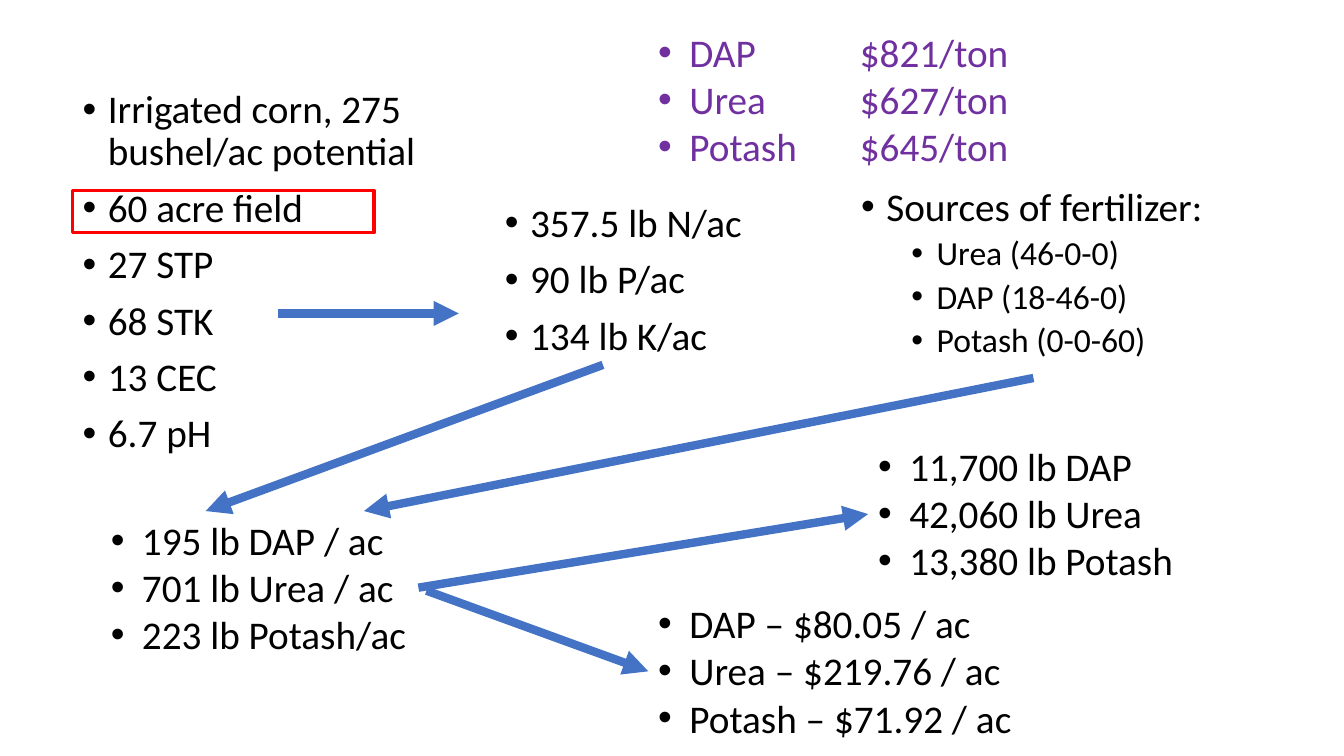
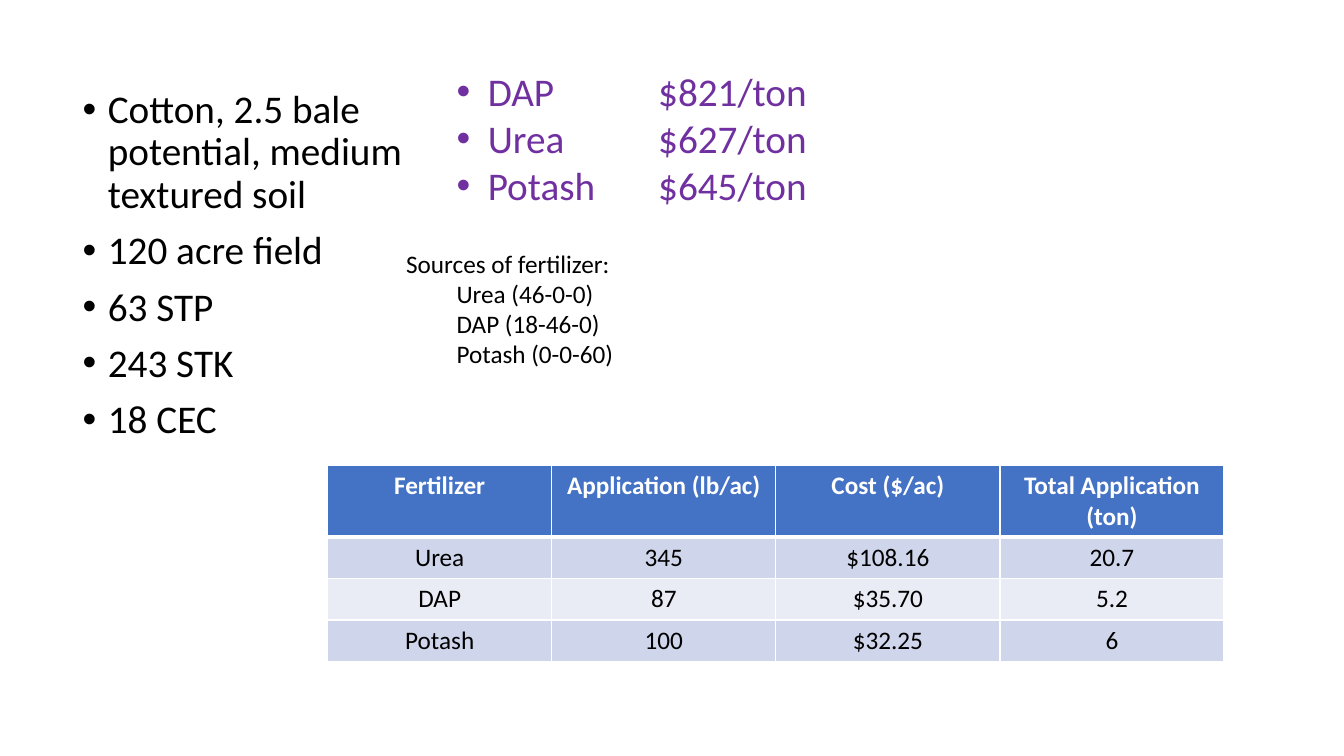
from pptx import Presentation
from pptx.dml.color import RGBColor
from pptx.enum.shapes import MSO_CONNECTOR, MSO_SHAPE
from pptx.enum.text import MSO_ANCHOR, MSO_AUTO_SIZE, PP_ALIGN
from pptx.oxml.ns import qn
from pptx.util import Inches, Pt
from lxml.etree import SubElement

# Shared colours and formats
FONT = "Calibri"
BLACK = RGBColor(0x00, 0x00, 0x00)
WHITE = RGBColor(0xFF, 0xFF, 0xFF)
PURPLE = RGBColor(0x70, 0x30, 0xA0)
RED = RGBColor(0xFF, 0x00, 0x00)
BLUE = RGBColor(0x44, 0x72, 0xC4)
BAND_DARK = RGBColor(0xCF, 0xD5, 0xEA)
BAND_LIGHT = RGBColor(0xE9, 0xEB, 0xF5)

# Paragraph styles: size, left margin, hanging indent, space before, line spacing
BODY = dict(size=28, margin=0.25, hanging=0.25, before=10, spacing=0.9, bullet=True)
SUB_BODY = dict(size=24, margin=0.75, hanging=0.25, before=5, spacing=0.9,
                bullet=True, level=1)
RESULT = dict(size=28, margin=0.31, hanging=0.31, bullet=True)
PRICE = dict(RESULT, color=PURPLE, tab=2)
NOTE = dict(size=18)
SUB_NOTE = dict(size=18, margin=0.5, level=1)

# Content used on both slides
FIELD_BOX = (0.72, 0.84, 3.51, 4.76)
RESULT_SIZE = (4.02, 1.51)
PRICES = ["DAP\t$821/ton", "Urea\t$627/ton", "Potash\t$645/ton"]
SOURCES_HEADING = "Sources of fertilizer:"
SOURCES = ["Urea (46-0-0)", "DAP (18-46-0)", "Potash (0-0-60)"]


def set_values(target, values):
    for name, value in values.items():
        setattr(target, name, value)


def format_font(font, size, color=BLACK, bold=False):
    set_values(font, dict(name=FONT, size=Pt(size), bold=bold))
    font.color.rgb = color


def format_paragraph(paragraph, first, size, color=BLACK, margin=0, hanging=0,
                     before=0, spacing=1.0, bullet=False, level=0, tab=None):
    properties = paragraph._p.get_or_add_pPr()
    properties.set("marL", str(Inches(margin)))
    properties.set("indent", str(-Inches(hanging)))
    if bullet:
        SubElement(properties, qn("a:buFont"), typeface="Arial")
        SubElement(properties, qn("a:buChar"), char="•")
    else:
        SubElement(properties, qn("a:buNone"))
    if tab:
        tabs = SubElement(properties, qn("a:tabLst"))
        SubElement(tabs, qn("a:tab"), pos=str(Inches(tab)), algn="l")
    set_values(paragraph, dict(level=level, line_spacing=spacing,
                               space_before=Pt(0 if first else before),
                               space_after=Pt(0), alignment=PP_ALIGN.LEFT))
    format_font(paragraph.font, size, color)


def fill_list(shape, items):
    """Write (text, style) items into a placeholder or text box."""
    frame = shape.text_frame
    set_values(frame, dict(word_wrap=True, auto_size=MSO_AUTO_SIZE.NONE,
                           vertical_anchor=MSO_ANCHOR.TOP))
    for index, (text, style) in enumerate(items):
        paragraph = frame.add_paragraph() if index else frame.paragraphs[0]
        format_paragraph(paragraph, index == 0, **style)
        paragraph.add_run().text = text


def styled(texts, style):
    return [(text, style) for text in texts]


def add_list(slide, box, items):
    fill_list(slide.shapes.add_textbox(*map(Inches, box)), items)


def place_body(slide, index, box, items):
    body = slide.placeholders[index]
    set_values(body, dict(zip(("left", "top", "width", "height"), map(Inches, box))))
    fill_list(body, items)


def add_result_list(slide, left, top, texts, style=RESULT):
    add_list(slide, (left, top, *RESULT_SIZE), styled(texts, style))


def add_arrow(slide, start, end):
    arrow = slide.shapes.add_connector(MSO_CONNECTOR.STRAIGHT,
                                       *map(Inches, (*start, *end)))
    arrow.line.color.rgb = BLUE
    arrow.line.width = Pt(6)
    SubElement(arrow.line._get_or_add_ln(), qn("a:tailEnd"), type="triangle")
    SubElement(arrow._element.spPr, qn("a:effectLst"))


def add_highlight(slide, box):
    frame = slide.shapes.add_shape(MSO_SHAPE.RECTANGLE, *map(Inches, box))
    frame.shadow.inherit = False
    frame.fill.background()
    frame.line.color.rgb = RED
    frame.line.width = Pt(2.25)


def add_cell_borders(cell, bottom):
    properties = cell._tc.get_or_add_tcPr()
    for side, width in (("L", 1), ("R", 1), ("T", 1), ("B", bottom)):
        line = SubElement(properties, qn(f"a:ln{side}"), w=str(Pt(width)))
        solid = SubElement(line, qn("a:solidFill"))
        SubElement(solid, qn("a:srgbClr"), val=str(WHITE))


def add_table(slide, box, rows, heights):
    table = slide.shapes.add_table(len(rows), len(rows[0]), *map(Inches, box)).table
    for row_index, (texts, height) in enumerate(zip(rows, heights)):
        table.rows[row_index].height = Inches(height)
        header = row_index == 0
        band = BLUE if header else BAND_DARK if row_index % 2 else BAND_LIGHT
        for column_index, text in enumerate(texts):
            cell = table.cell(row_index, column_index)
            add_cell_borders(cell, bottom=3 if header else 1)
            cell.fill.solid()
            cell.fill.fore_color.rgb = band
            paragraph = cell.text_frame.paragraphs[0]
            paragraph.alignment = PP_ALIGN.CENTER
            run = paragraph.add_run()
            run.text = text
            format_font(run.font, 18, WHITE if header else BLACK, header)


def new_slide(presentation, layout_index):
    """Add a slide that shows no title."""
    slide = presentation.slides.add_slide(presentation.slide_layouts[layout_index])
    title = slide.shapes.title._element
    title.getparent().remove(title)
    return slide


def build_corn_slide(presentation):
    slide = new_slide(presentation, 3)

    # Field data, nutrient needs and fertilizer sources
    place_body(slide, 1, FIELD_BOX, styled(
        ["Irrigated corn, 275 bushel/ac potential", "60 acre field", "27 STP",
         "68 STK", "13 CEC", "6.7 pH"], BODY))
    place_body(slide, 2, (8.44, 1.81, 4.27, 4.76),
               [(SOURCES_HEADING, BODY), *styled(SOURCES, SUB_BODY)])
    add_list(slide, (4.91, 1.97, 3.51, 1.65), styled(
        ["357.5 lb N/ac", "90 lb P/ac", "134 lb K/ac"], BODY))
    add_highlight(slide, (0.72, 1.89, 2.99, 0.42))

    # Rates, totals, costs and prices
    add_result_list(slide, 1, 5.07,
                    ["195 lb DAP / ac", "701 lb Urea / ac", "223 lb Potash/ac"])
    add_result_list(slide, 8.61, 4.34,
                    ["11,700 lb DAP", "42,060 lb Urea", "13,380 lb Potash"])
    add_result_list(slide, 6.43, 5.9, ["DAP – $80.05 / ac", "Urea – $219.76 / ac",
                                       "Potash – $71.92 / ac"])
    add_result_list(slide, 6.43, 0.23, PRICES, PRICE)

    # Calculation steps
    for start, end in (((2.76, 3.11), (4.55, 3.11)),
                       ((5.98, 3.62), (2.04, 5.07)),
                       ((10.25, 3.75), (3.61, 5.07)),
                       ((4.15, 5.83), (8.61, 5.1)),
                       ((4.23, 5.86), (6.43, 6.66))):
        add_arrow(slide, start, end)


def build_cotton_slide(presentation):
    slide = new_slide(presentation, 1)

    # Field data, sources and prices
    place_body(slide, 1, FIELD_BOX, styled(
        ["Cotton, 2.5 bale potential, medium textured soil", "120 acre field",
         "63 STP", "243 STK", "18 CEC"], BODY))
    add_list(slide, (3.93, 2.41, 2.52, 1.31),
             [(SOURCES_HEADING, NOTE), *styled(SOURCES, SUB_NOTE)])
    add_result_list(slide, 4.43, 0.62, PRICES, PRICE)

    # Application and cost table
    add_table(slide, (3.25, 4.62, 8.89, 1.92), [
        ["Fertilizer", "Application (lb/ac)", "Cost ($/ac)", "Total Application (ton)"],
        ["Urea", "345", "$108.16", "20.7"],
        ["DAP", "87", "$35.70", "5.2"],
        ["Potash", "100", "$32.25", "6"],
    ], heights=[0.69, 0.41, 0.41, 0.41])


def main():
    presentation = Presentation()
    presentation.slide_width = Inches(13.33)
    presentation.slide_height = Inches(7.5)
    build_corn_slide(presentation)
    build_cotton_slide(presentation)
    presentation.save("out.pptx")


if __name__ == "__main__":
    main()
